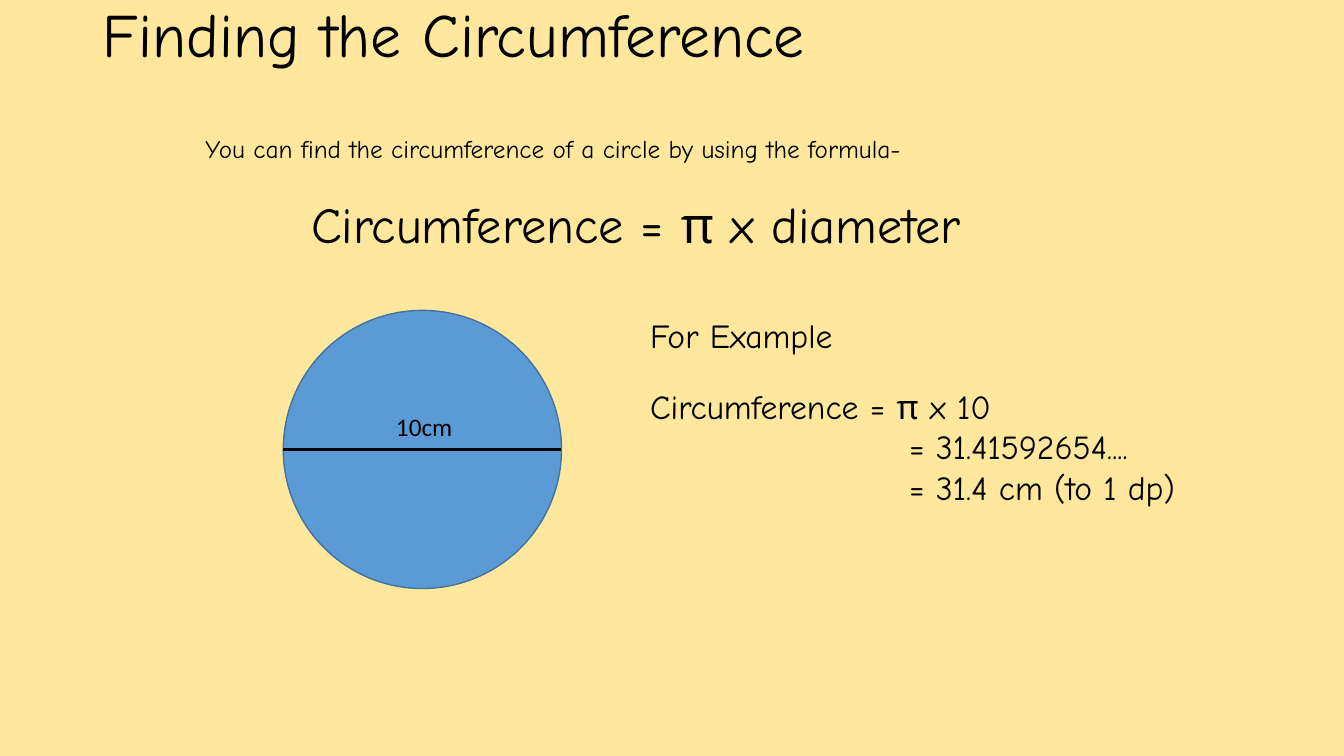
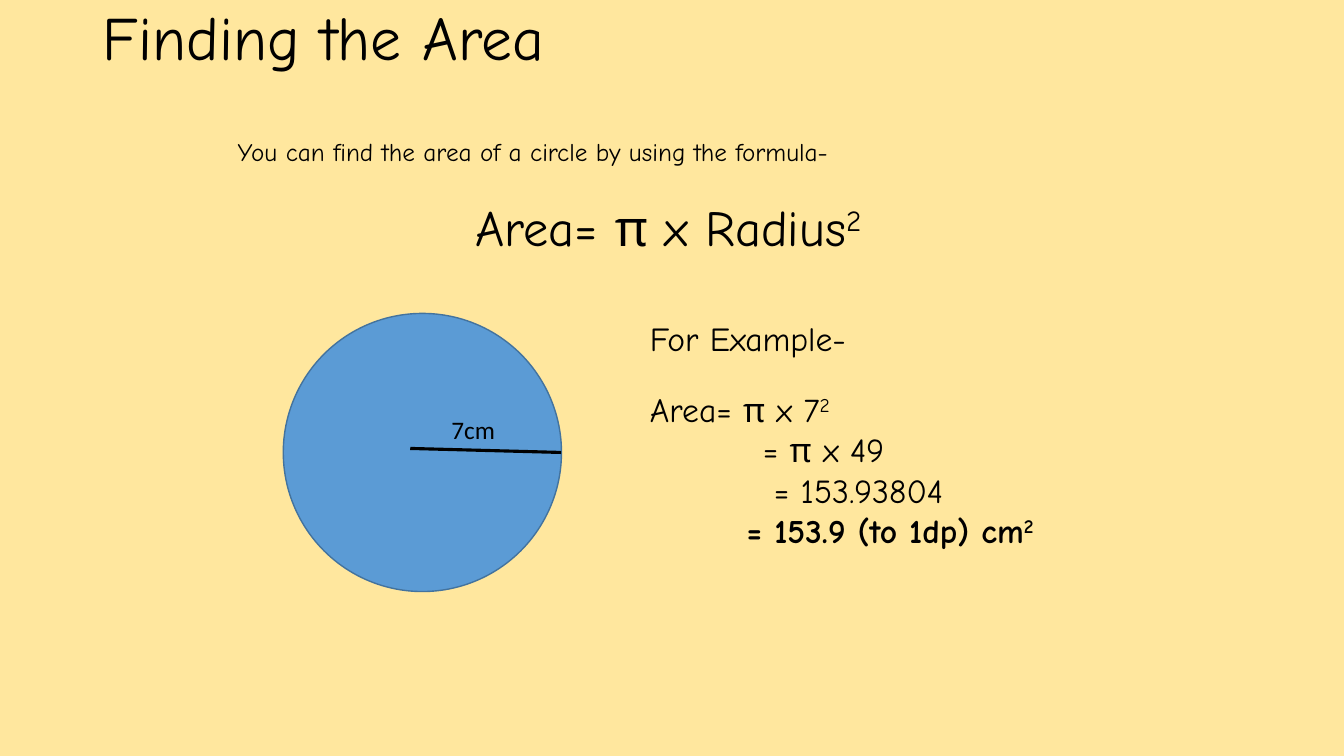
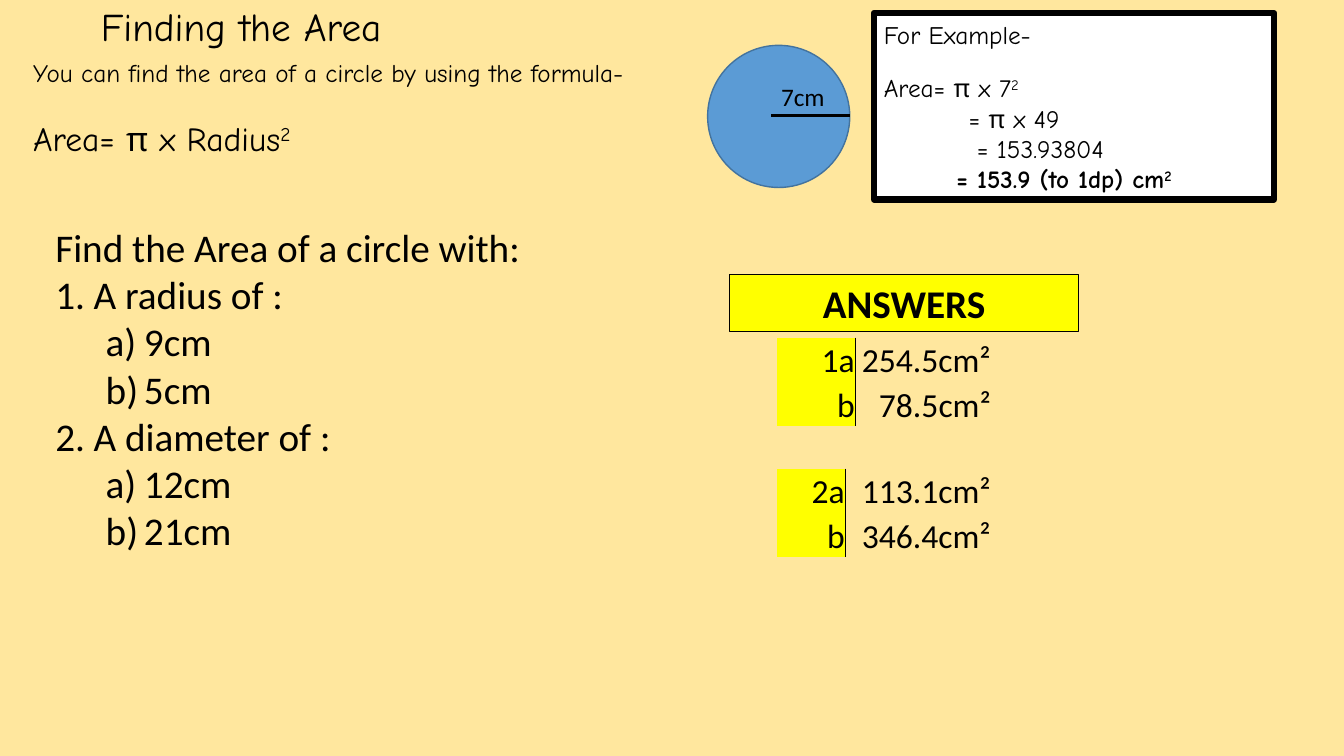
from lxml.etree import SubElement
from pptx import Presentation
from pptx.dml.color import RGBColor as RGB
from pptx.enum.shapes import MSO_CONNECTOR as LINK, MSO_SHAPE as KIND
from pptx.enum.text import MSO_ANCHOR as ANCHOR, PP_ALIGN as ALIGN
from pptx.oxml.ns import qn
from pptx.util import Inches, Pt

BLACK = RGB(0x00, 0x00, 0x00)
WHITE = RGB(0xFF, 0xFF, 0xFF)
CREAM = RGB(0xFF, 0xE7, 0x9E)
BLUE = RGB(0x5B, 0x9B, 0xD5)
NAVY = RGB(0x43, 0x73, 0x9E)
YELLOW = RGB(0xFF, 0xFF, 0x00)
HAND, PLAIN = "Comic Neue", "Calibri"
PLAIN_GRID = "{2D5ABB26-0587-4C30-8999-92F81FD0307C}"

deck = Presentation()
deck.slide_width, deck.slide_height = Inches(13.33), Inches(7.5)
cell = deck.slide_width / 160
ground = deck.slide_master.background.fill
ground.solid()
ground.fore_color.rgb = CREAM


def panel(slide, kind, spot, fill=None, edge=None, width=1):
    place = [round(v * cell) for v in spot]
    if kind is None:
        shape = slide.shapes.add_textbox(*place)
    else:
        shape = slide.shapes.add_shape(kind, *place)
        shape.shadow.inherit = False
        shape.fill.solid()
        shape.fill.fore_color.rgb = fill
        shape.line.color.rgb = edge
        shape.line.width = Pt(width)
    shape.text_frame.word_wrap = True
    return shape.text_frame


def write(frame, text, size, face=HAND, gap=0, left=0, hang=0,
          mark=None, bold=False, align=ALIGN.LEFT):
    para = frame.paragraphs[0]
    if para.runs:
        para = frame.add_paragraph()
    for turn, part in enumerate(text.split("^")):
        run = para.add_run()
        run.text = part
        if turn:
            run.font._element.set("baseline", "30000")
    para.alignment = align
    if gap:
        para.space_before = Pt(gap)
    if left:
        props = para._p.get_or_add_pPr()
        props.set("marL", str(Inches(left)))
        props.set("indent", str(-Inches(hang)))
        if mark:
            SubElement(props, qn("a:buAutoNum"), type=mark)
    font = para.font
    font.name, font.size, font.bold = face, Pt(size), bold
    font.color.rgb = BLACK
    return para


ring_work = [("For Example", 0), ("Circumference = π x 10", 0),
             ("= 31.41592654....", 2.57), ("= 31.4 cm (to 1 dp)", 2.57)]
area_work = [("For Example-", 0), ("Area= π x 7^2", 0), ("= π x 49", 1.12),
             ("= 153.93804", 1.23), ("= 153.9 (to 1dp) cm^2", 0.96)]
area_lead = "You can find the area of a circle by using the formula-"
area_rule = "Area= π x Radius^2"

pages = [
    dict(title="Finding the Circumference", top=(11.04, -4.2, 138, 17.4), head=44,
         lead="You can find the circumference of a circle by using the formula-",
         rule="Circumference = π x diameter", big=36, align=ALIGN.CENTER,
         intro=(23.28, 15.24, 104.88, 15.72), disc=(33.72, 36.96, 33.12, 33.12),
         kind=None, work=ring_work, size=24, gap=21.6, note=(76.2, 36.96, 82.08, 42.36),
         span=(33.72, 53.52, 66.84, 53.52), label="10cm", tag=(45.96, 48.36, 9.24, 4.8)),
    dict(title="Finding the Area", top=(11.04, -3.84, 138, 17.4), head=44,
         lead=area_lead, rule=area_rule, big=36, align=ALIGN.CENTER,
         intro=(27.12, 15.6, 104.88, 15.72), disc=(33.72, 37.32, 33.12, 33.12),
         kind=None, work=area_work, size=24, gap=21.6, note=(76.2, 37.32, 58.56, 43.68),
         span=(48.84, 53.4, 66.8, 53.88), label="7cm", tag=(52.56, 48.72, 7.68, 4.8)),
    dict(title="Finding the Area", top=(10.8, -4.08, 108, 15), head=28,
         lead=area_lead, rule=area_rule, big=24, align=ALIGN.LEFT,
         intro=(2.76, 6.24, 104.88, 13.32), disc=(84.24, 5.4, 16.92, 16.92),
         kind=KIND.RECTANGLE, work=area_work, size=18, gap=16.8,
         note=(104.04, 1.56, 47.64, 22.2),
         span=(91.8, 13.8, 101.16, 13.8), label="7cm", tag=(91.8, 9.12, 7.68, 4.8)),
]

for page in pages:
    slide = deck.slides.add_slide(deck.slide_layouts[5])
    title = slide.shapes.title
    title.left, title.top, title.width, title.height = [
        round(v * cell) for v in page["top"]]
    title.text_frame.vertical_anchor = ANCHOR.MIDDLE
    write(title.text_frame, page["title"], page["head"]).line_spacing = 0.9

    intro = panel(slide, None, page["intro"])
    write(intro, page["lead"], 18)
    write(intro, page["rule"], page["big"], gap=21.6, align=page["align"])

    panel(slide, KIND.OVAL, page["disc"], BLUE, NAVY)

    note = panel(slide, page["kind"], page["note"], WHITE, BLACK, 4.5)
    for row, (text, left) in enumerate(page["work"]):
        write(note, text, page["size"], gap=page["gap"] if row == 1 else 0,
              left=left * page["size"] / 24, bold=row == 4)

    line = slide.shapes.add_connector(
        LINK.STRAIGHT, *[round(v * cell) for v in page["span"]])
    line.line.color.rgb = BLACK
    line.line.width = Pt(2.25)
    SubElement(line._element.spPr, qn("a:effectLst"))

    tag = panel(slide, None, page["tag"])
    tag.word_wrap = False
    write(tag, page["label"], 18, PLAIN)

tasks = panel(slide, None, (5.4, 26.04, 106.8, 52.08))
write(tasks, "Find the Area of a circle with:", 28, PLAIN)
for head, items in [("A radius of :", ("9cm", "5cm")),
                    ("A diameter of :", ("12cm", "21cm"))]:
    write(tasks, head, 28, PLAIN, left=0.38, hang=0.38, mark="arabicPeriod")
    for item in items:
        write(tasks, item, 28, PLAIN, left=0.88, hang=0.38,
              mark="alphaLcParenR").level = 1

grids = [(40.2, (9.36, 16.2), [("1a", "254.5cm²"), ("b", "78.5cm²")]),
         (55.8, (8.16, 17.4), [("2a", "113.1cm²"), ("b", "346.4cm²")])]
for top, wide, rows in grids:
    place = [round(v * cell) for v in (92.52, top, sum(wide), 10.56)]
    frame = slide.shapes.add_table(2, 2, *place)
    table = frame.table
    table.first_row = table.horz_banding = False
    table._tbl.tblPr.find(qn("a:tableStyleId")).text = PLAIN_GRID
    for col, width in zip(table.columns, wide):
        col.width = round(width * cell)
    for r, row in enumerate(rows):
        for c, text in enumerate(row):
            box = table.cell(r, c)
            box.margin_left = box.margin_right = box.margin_top = Inches(0.01)
            box.margin_bottom = 0
            box.vertical_anchor = ANCHOR.BOTTOM
            write(box.text_frame, text, 24, PLAIN, align=ALIGN.RIGHT)
            edge = SubElement(box._tc.get_or_add_tcPr(),
                              qn("a:lnL" if c else "a:lnR"), w=str(Pt(0.5)))
            paint = SubElement(edge, qn("a:solidFill"))
            SubElement(paint, qn("a:srgbClr"), val=str(BLACK))
            if c:
                box.fill.background()
            else:
                box.fill.solid()
                box.fill.fore_color.rgb = YELLOW

sign = panel(slide, KIND.RECTANGLE, (86.88, 32.64, 41.52, 6.84), YELLOW, BLACK, 0.75)
write(sign, "ANSWERS", 28, PLAIN, bold=True, align=ALIGN.CENTER)

deck.save("out.pptx")
